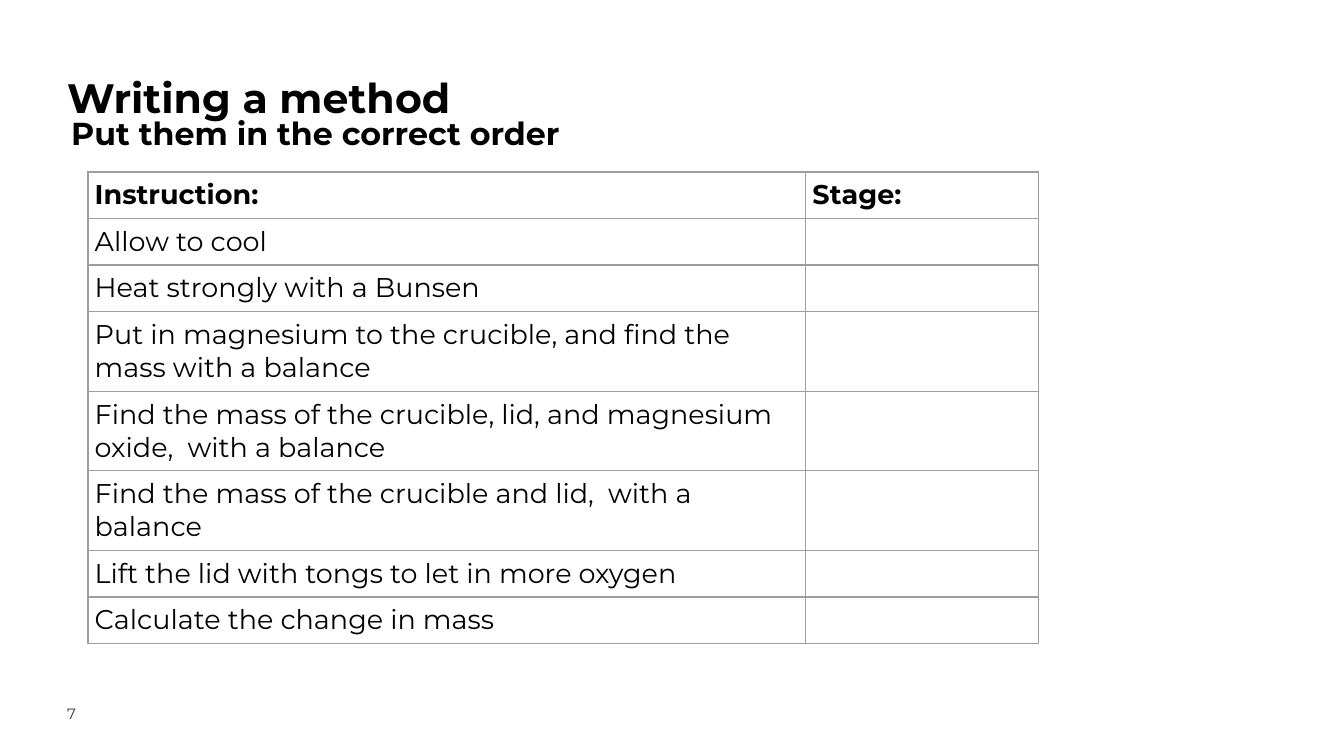
from lxml import etree
from pptx import Presentation
from pptx.dml.color import RGBColor
from pptx.enum.text import MSO_ANCHOR
from pptx.oxml.ns import qn
from pptx.util import Cm, Pt

TOP = MSO_ANCHOR.TOP
FONT = "Montserrat"
BLACK = "000000"
GREY = "9E9E9E"
PLUM = "4B3241"
PAD = 0.25


def color(code):
    return RGBColor.from_string(code)


def write(frame, text, size, bold=False, code=BLACK):
    run = frame.paragraphs[0].add_run()
    run.text = text
    run.font.name = FONT
    run.font.size = Pt(size)
    run.font.bold = bold
    run.font.color.rgb = color(code)


deck = Presentation()
deck.slide_width = Cm(50.8)
deck.slide_height = Cm(28.58)
slide = deck.slides.add_slide(deck.slide_layouts[6])

labels = [
    ("7", 2.54, 26.62, 4, 1, 0, 16, False, PLUM, 1),
    ("Writing a method", 2.54, 2.46, 36.68, 2.62, 0, 44, True, BLACK, 1.15),
    ("Put them in the correct order", 2.44, 4.06, 19.46, 2.5, PAD, 34, True, BLACK, 1),
]
for text, left, top, width, height, pad, size, bold, code, space in labels:
    box = slide.shapes.add_textbox(Cm(left), Cm(top), Cm(width), Cm(height))
    frame = box.text_frame
    frame.word_wrap = True
    frame.vertical_anchor = TOP
    frame.margin_left = frame.margin_right = Cm(pad)
    frame.margin_top = frame.margin_bottom = Cm(pad)
    frame.paragraphs[0].line_spacing = space
    write(frame, text, size, bold, code)

steps = [
    ("Instruction:", 1),
    ("Allow to cool", 1),
    ("Heat strongly with a Bunsen", 1),
    ("Put in magnesium to the crucible, and find the mass with a balance", 2),
    ("Find the mass of the crucible, lid, and magnesium oxide,  with a balance", 2),
    ("Find the mass of the crucible and lid,  with a balance", 2),
    ("Lift the lid with tongs to let in more oxygen", 1),
    ("Calculate the change in mass", 1),
]
widths = [27.13, 8.79]
heights = [0.51 + 1.25 * lines for text, lines in steps]
table = slide.shapes.add_table(
    len(steps), 2, Cm(3.33), Cm(6.5), Cm(sum(widths)), Cm(sum(heights))
).table
table.first_row = False
table.horz_banding = False
for col, width in zip(table.columns, widths):
    col.width = Cm(width)
for row, height in zip(table.rows, heights):
    row.height = Cm(height)

for num, (text, lines) in enumerate(steps):
    write(table.cell(num, 0).text_frame, text, 29, num == 0)
write(table.cell(0, 1).text_frame, "Stage:", 29, True)

for cell in table.iter_cells():
    cell.margin_left = cell.margin_right = Cm(PAD)
    cell.margin_top = cell.margin_bottom = Cm(PAD)
    cell.vertical_anchor = TOP
    props = cell._tc.get_or_add_tcPr()
    for side in ("a:lnL", "a:lnR", "a:lnT", "a:lnB"):
        line = etree.SubElement(props, qn(side), w=str(Pt(1.5)))
        fill = etree.SubElement(line, qn("a:solidFill"))
        etree.SubElement(fill, qn("a:srgbClr"), val=GREY)
    cell.fill.background()

deck.save("out.pptx")
